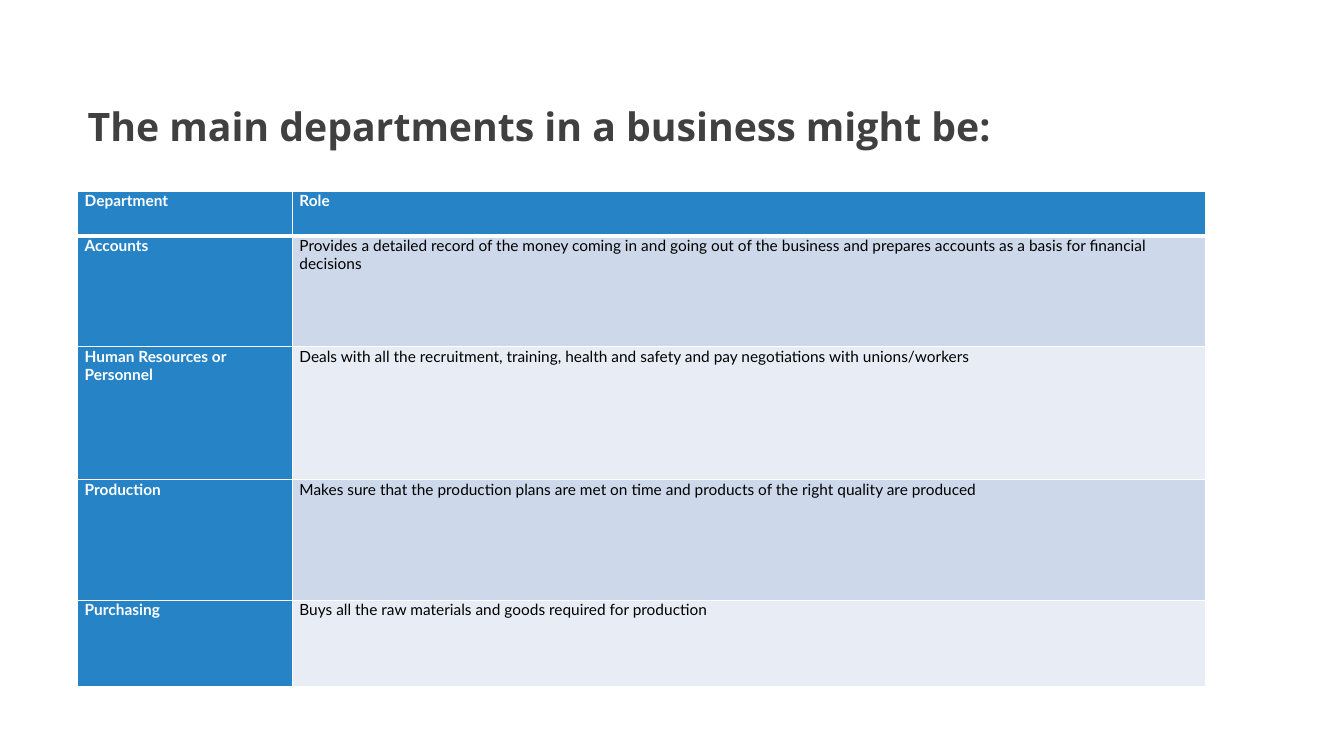
import pptx
import pptx.util
import pptx.dml.color
import pptx.enum.text
import lxml.etree
from pptx.util import Inches
from pptx.oxml.ns import qn


def style_run(run, font_name, size, color, bold):
    run.font.name = font_name
    run.font.size = pptx.util.Pt(size)
    run.font.bold = bold
    run.font.color.rgb = pptx.dml.color.RGBColor.from_string(color)


def add_border(cell, side, width):
    line = lxml.etree.SubElement(
        cell._tc.get_or_add_tcPr(), qn(f"a:ln{side}"), w=str(pptx.util.Pt(width)))
    fill = lxml.etree.SubElement(line, qn("a:solidFill"))
    lxml.etree.SubElement(fill, qn("a:srgbClr"), val="FFFFFF")


presentation = pptx.Presentation()
presentation.slide_width = Inches(13.33)
presentation.slide_height = Inches(7.5)
slide = presentation.slides.add_slide(presentation.slide_layouts[5])

heading = slide.shapes.title
heading.left, heading.top = Inches(0.77), Inches(0.6)
heading.width, heading.height = Inches(10.97), Inches(1.39)
heading_frame = heading.text_frame
heading_frame.word_wrap = True
heading_frame.auto_size = pptx.enum.text.MSO_AUTO_SIZE.NONE
heading_frame.vertical_anchor = pptx.enum.text.MSO_ANCHOR.BOTTOM
heading_frame.margin_bottom = Inches(0.5)
heading_line = heading_frame.paragraphs[0]
heading_line.alignment = pptx.enum.text.PP_ALIGN.LEFT
heading_line.line_spacing = 0.9
heading_run = heading_line.add_run()
heading_run.text = "The main departments in a business might be:"
style_run(heading_run, "Open Sans", 28, "404040", True)

departments = [
    ("Department", "Role", 0.44),
    ("Accounts", "Provides a detailed record of the money coming in and going out of the "
     "business and prepares accounts as a basis for financial decisions", 1.1),
    ("Human Resources or Personnel", "Deals with all the recruitment, training, health "
     "and safety and pay negotiations with unions/workers", 1.32),
    ("Production", "Makes sure that the production plans are met on time and products of "
     "the right quality are produced", 1.2),
    ("Purchasing", "Buys all the raw materials and goods required for production", 0.85),
]
roles_table = slide.shapes.add_table(
    len(departments), 2, Inches(0.77), Inches(1.9), Inches(11.19), Inches(4.91)).table
roles_table.columns[0].width = Inches(2.13)
roles_table.columns[1].width = Inches(9.06)

for row, (department, role, height) in enumerate(departments):
    roles_table.rows[row].height = Inches(height)
    for column, wording in enumerate((department, role)):
        cell = roles_table.cell(row, column)
        is_heading = row == 0 or column == 0
        cell.margin_left = cell.margin_right = Inches(0.07)
        cell.margin_top = cell.margin_bottom = 0
        add_border(cell, "L", 1)
        add_border(cell, "R", 1)
        add_border(cell, "T", 3 if row == 1 else 1)
        add_border(cell, "B", 3 if row == 0 else 1)
        band = "CDD9EA" if row % 2 else "E8EDF5"
        cell.fill.solid()
        cell.fill.fore_color.rgb = pptx.dml.color.RGBColor.from_string(
            "2683C6" if is_heading else band)
        wording_run = cell.text_frame.paragraphs[0].add_run()
        wording_run.text = wording
        style_run(wording_run, "Lato", 11, "FFFFFF" if is_heading else "000000", is_heading)

presentation.save("out.pptx")
